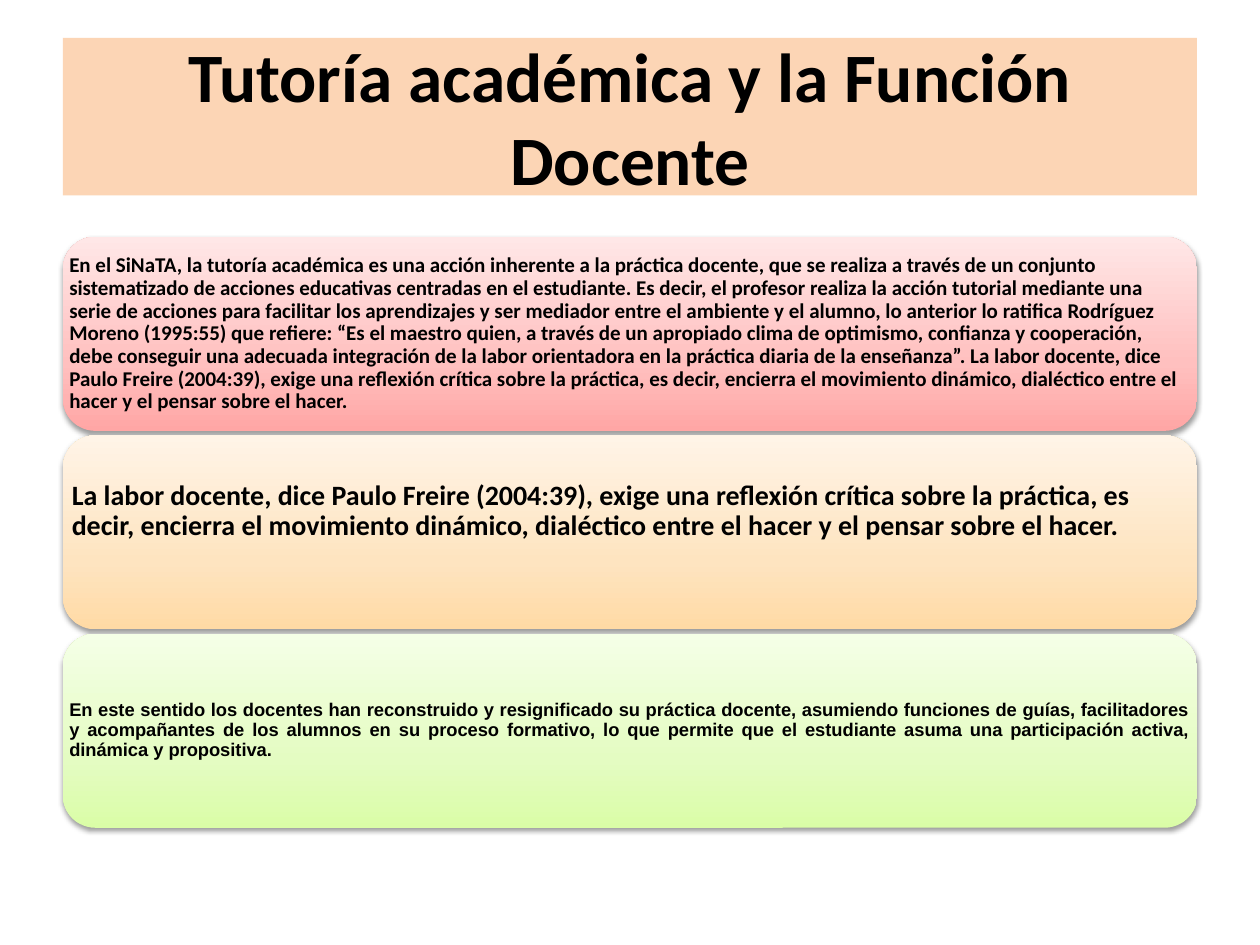
from copy import deepcopy

from lxml.etree import SubElement
from pptx import Presentation
from pptx.dml.color import RGBColor
from pptx.enum.shapes import MSO_SHAPE as SHAPE
from pptx.enum.text import MSO_ANCHOR as ANCHOR, PP_ALIGN as ALIGN
from pptx.oxml.ns import qn
from pptx.util import Inches, Pt

COLORS = {
    "title": "FCD5B5",
    "text": "000000",
    "shadow": "000000",
    "red": ("FFA6A5", "FFC0BF", "FFE7E7"),
    "orange": ("FFDAA5", "FEE4C0", "FFF4E7"),
    "green": ("DAFDA7", "E4FCC2", "F5FFE7"),
}
STOPS = (0, 0.35, 1)

# One column of three equal rows
LEFT, WIDTH = 0.5, 9
TOP, HEIGHT, PITCH = 1.88, 1.54, 1.575

# Gradient, text, font, size, alignment, inset, extra space at the bottom
PANELS = [
    ("red",
     "En el SiNaTA, la tutoría académica es una acción inherente a la práctica docente, "
     "que se realiza a través de un conjunto sistematizado de acciones educativas centradas "
     "en el estudiante. Es decir, el profesor realiza la acción tutorial mediante una serie "
     "de acciones para facilitar los aprendizajes y ser mediador entre el ambiente y el "
     "alumno, lo anterior lo ratifica Rodríguez Moreno (1995:55) que refiere: “Es el maestro "
     "quien, a través de un apropiado clima de optimismo, confianza y cooperación, debe "
     "conseguir una adecuada integración de la labor orientadora en la práctica diaria de la "
     "enseñanza”. La labor docente, dice Paulo Freire (2004:39), exige una reflexión crítica "
     "sobre la práctica, es decir, encierra el movimiento dinámico, dialéctico entre el hacer "
     "y el pensar sobre el hacer.",
     "Calibri", 12, ALIGN.LEFT, 0.05, 0),
    ("orange",
     "La labor docente, dice Paulo Freire (2004:39), exige una reflexión crítica sobre la "
     "práctica, es decir, encierra el movimiento dinámico, dialéctico entre el hacer y el "
     "pensar sobre el hacer.",
     "Calibri", 16, ALIGN.LEFT, 0.07, 0.33),
    ("green",
     "En este sentido los docentes han reconstruido y resignificado su práctica docente, "
     "asumiendo funciones de guías, facilitadores y acompañantes de los alumnos en su proceso "
     "formativo, lo que permite que el estudiante asuma una participación activa, dinámica y "
     "propositiva.",
     "Arial", 10.5, ALIGN.JUSTIFY, 0.05, 0),
]


def add_text(slide, box, text, font, size, align):
    shape = slide.shapes.add_textbox(*map(Inches, box))
    frame = shape.text_frame
    frame.word_wrap = True
    frame.vertical_anchor = ANCHOR.MIDDLE
    paragraph = frame.paragraphs[0]
    paragraph.text = text
    paragraph.alignment = align
    paragraph.font.name = font
    paragraph.font.size = Pt(size)
    paragraph.font.bold = True
    paragraph.font.color.rgb = RGBColor.from_string(COLORS["text"])
    return shape


def add_panel(slide, box, colors):
    shape = slide.shapes.add_shape(SHAPE.ROUNDED_RECTANGLE, *map(Inches, box))
    shape.line.fill.background()

    # Three-stop gradient, running from the bottom up
    shape.fill.gradient()
    shape.fill.gradient_angle = 90
    stop_list = shape._element.spPr.find(qn("a:gradFill")).find(qn("a:gsLst"))
    stop_list.append(deepcopy(stop_list[0]))
    for stop, position, color in zip(shape.fill.gradient_stops, STOPS, colors):
        stop.position = position
        stop.color.rgb = RGBColor.from_string(color)

    # Soft shadow below
    shape.shadow.inherit = False
    effects = shape._element.spPr.find(qn("a:effectLst"))
    shadow = SubElement(effects, qn("a:outerShdw"), blurRad=str(Pt(3.1)),
                        dist=str(Pt(1.6)), dir="5400000", rotWithShape="0")
    color = SubElement(shadow, qn("a:srgbClr"), val=COLORS["shadow"])
    SubElement(color, qn("a:alpha"), val="38000")


presentation = Presentation()
presentation.slide_width, presentation.slide_height = Inches(10), Inches(7.5)
slide = presentation.slides.add_slide(presentation.slide_layouts[6])

# Panels with their text
for row, (name, text, font, size, align, inset, extra) in enumerate(PANELS):
    box = (LEFT, TOP + row * PITCH, WIDTH, HEIGHT)
    add_panel(slide, box, COLORS[name])
    shape = add_text(slide, box, text, font, size, align)
    frame = shape.text_frame
    frame.margin_left = frame.margin_right = frame.margin_top = Inches(inset)
    frame.margin_bottom = Inches(inset + extra)
    frame.paragraphs[0].line_spacing = 0.9

# Title band
title = add_text(slide, (LEFT, 0.3, WIDTH, 1.25),
                 "Tutoría académica y la Función Docente", "Calibri", 39.6, ALIGN.CENTER)
title.fill.solid()
title.fill.fore_color.rgb = RGBColor.from_string(COLORS["title"])

presentation.save("out.pptx")
